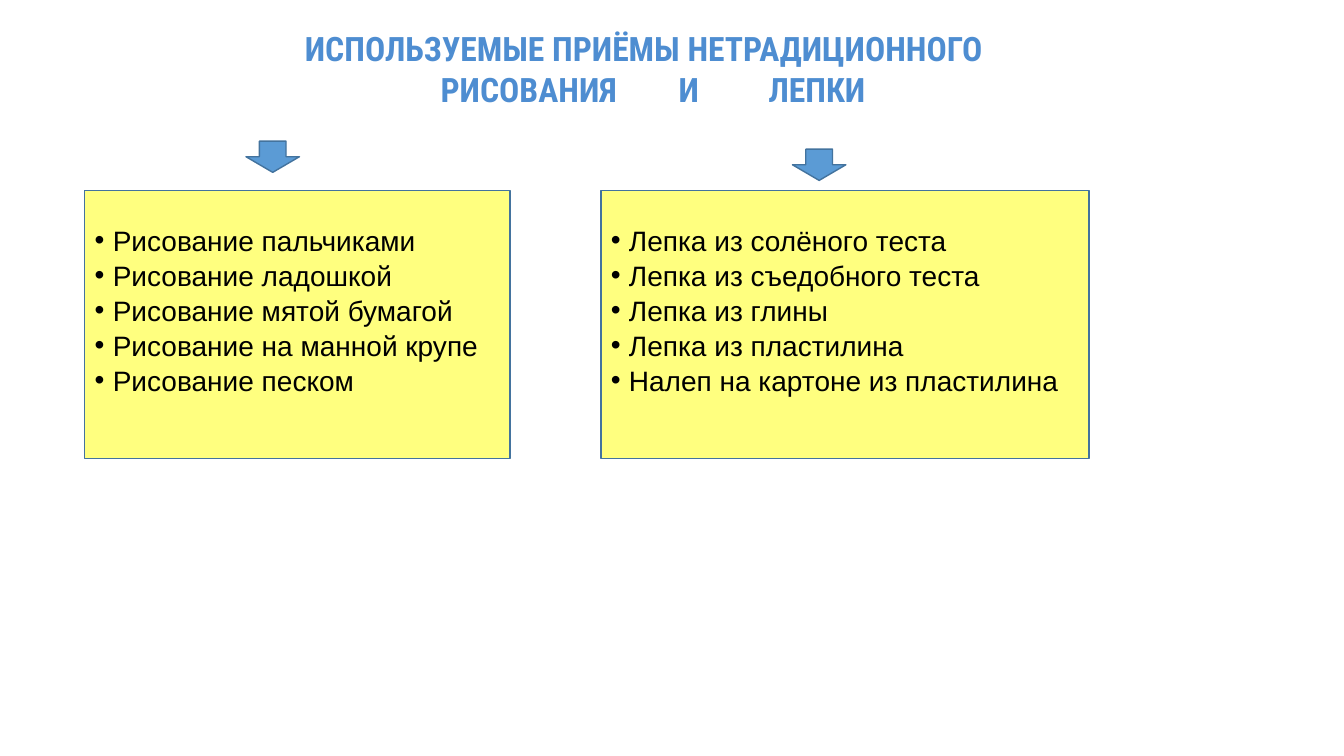
"""Build a slide of drawing and modelling techniques in two boxes."""
from lxml import etree
from pptx import Presentation
from pptx.dml.color import RGBColor
from pptx.enum.shapes import MSO_SHAPE
from pptx.enum.text import MSO_ANCHOR, MSO_AUTO_SIZE, PP_ALIGN
from pptx.oxml.ns import qn
from pptx.util import Inches, Pt

RECT, ARROW = MSO_SHAPE.RECTANGLE, MSO_SHAPE.DOWN_ARROW
TOP, MIDDLE = MSO_ANCHOR.TOP, MSO_ANCHOR.MIDDLE
LEFT, CENTER = PP_ALIGN.LEFT, PP_ALIGN.CENTER
FIXED = MSO_AUTO_SIZE.NONE

TITLE = ["ИСПОЛЬЗУЕМЫЕ ПРИЁМЫ НЕТРАДИЦИОННОГО", "\tРИСОВАНИЯ\tИ\tЛЕПКИ"]
STOPS = [2.22, 4.58, 5.47]
GROUPS = [
    {"left": 0.84, "width": 4.22, "arrow": (2.44, 1.4), "items": [
        "Рисование пальчиками",
        "Рисование ладошкой",
        "Рисование мятой бумагой",
        "Рисование на манной крупе",
        "Рисование песком",
    ]},
    {"left": 5.96, "width": 4.84, "arrow": (7.86, 1.48), "items": [
        "Лепка из солёного теста",
        "Лепка из съедобного теста",
        "Лепка из глины",
        "Лепка из пластилина",
        "Налеп на картоне из пластилина",
    ]},
]
BOX_TOP, BOX_TALL = 1.89, 2.66
ARROW_SIZE = (0.53, 0.31)
HANG = 0.18


def rgb(code):
    return RGBColor.from_string(code)


THEME = {
    "title": {"name": "Roboto Condensed", "size": Pt(24), "bold": True},
    "item": {"name": "Arial", "size": Pt(20), "bold": False},
    "blue": rgb("4E8DD1"), "black": rgb("000000"), "yellow": rgb("FFFF00"),
    "arrow": rgb("5B9BD5"), "edge": rgb("43739E"),
}


def apply(target, values):
    for name, value in values.items():
        setattr(target, name, value)


def style(para, kind, color):
    apply(para.font, THEME[kind])
    para.font.color.rgb = THEME[color]


def add(parent, tag, **values):
    return etree.SubElement(parent, qn(tag), values)


def draw(slide, kind, place, color):
    shape = slide.shapes.add_shape(kind, *map(Inches, place))
    shape.shadow.inherit = False
    shape.fill.solid()
    shape.fill.fore_color.rgb = THEME[color]
    shape.line.color.rgb = THEME["edge"]
    shape.line.width = Pt(1)
    return shape


def add_title(slide):
    title = slide.shapes.title
    apply(title, {"left": Inches(2.05), "top": Inches(0.23),
                  "width": Inches(8.67), "height": Inches(0.91)})
    frame = title.text_frame
    apply(frame, {"text": "\n".join(TITLE), "word_wrap": True,
                  "auto_size": FIXED, "vertical_anchor": TOP})
    first, second = frame.paragraphs
    first.alignment, second.alignment = CENTER, LEFT
    tabs = add(second._p.get_or_add_pPr(), "a:tabLst")
    for stop in STOPS:
        add(tabs, "a:tab", pos=str(Inches(stop)), algn="l")
    for para in frame.paragraphs:
        style(para, "title", "blue")


def add_list(box, items):
    frame = box.text_frame
    apply(frame, {"text": "\n".join(items), "word_wrap": True,
                  "vertical_anchor": MIDDLE, "margin_bottom": Inches(0.34)})
    for index, para in enumerate(frame.paragraphs):
        para.alignment = LEFT
        props = para._p.get_or_add_pPr()
        props.set("marL", str(Inches(HANG)))
        props.set("indent", str(-Inches(HANG)))
        add(props, "a:buFont", typeface="Arial")
        add(props, "a:buChar", char="•")
        if index:
            para.space_before = Pt(1)
        style(para, "item", "black")


def add_group(slide, group):
    place = (group["left"], BOX_TOP, group["width"], BOX_TALL)
    box = draw(slide, RECT, place, "yellow")
    tint = box.fill._xPr.find(qn("a:solidFill"))[0]
    add(tint, "a:alpha", val="50000")
    add_list(box, group["items"])
    draw(slide, ARROW, group["arrow"] + ARROW_SIZE, "arrow")


def main():
    deck = Presentation()
    apply(deck, {"slide_width": Inches(13.33), "slide_height": Inches(7.5)})
    slide = deck.slides.add_slide(deck.slide_layouts[5])
    add_title(slide)
    for group in GROUPS:
        add_group(slide, group)
    deck.save("out.pptx")


if __name__ == "__main__":
    main()
